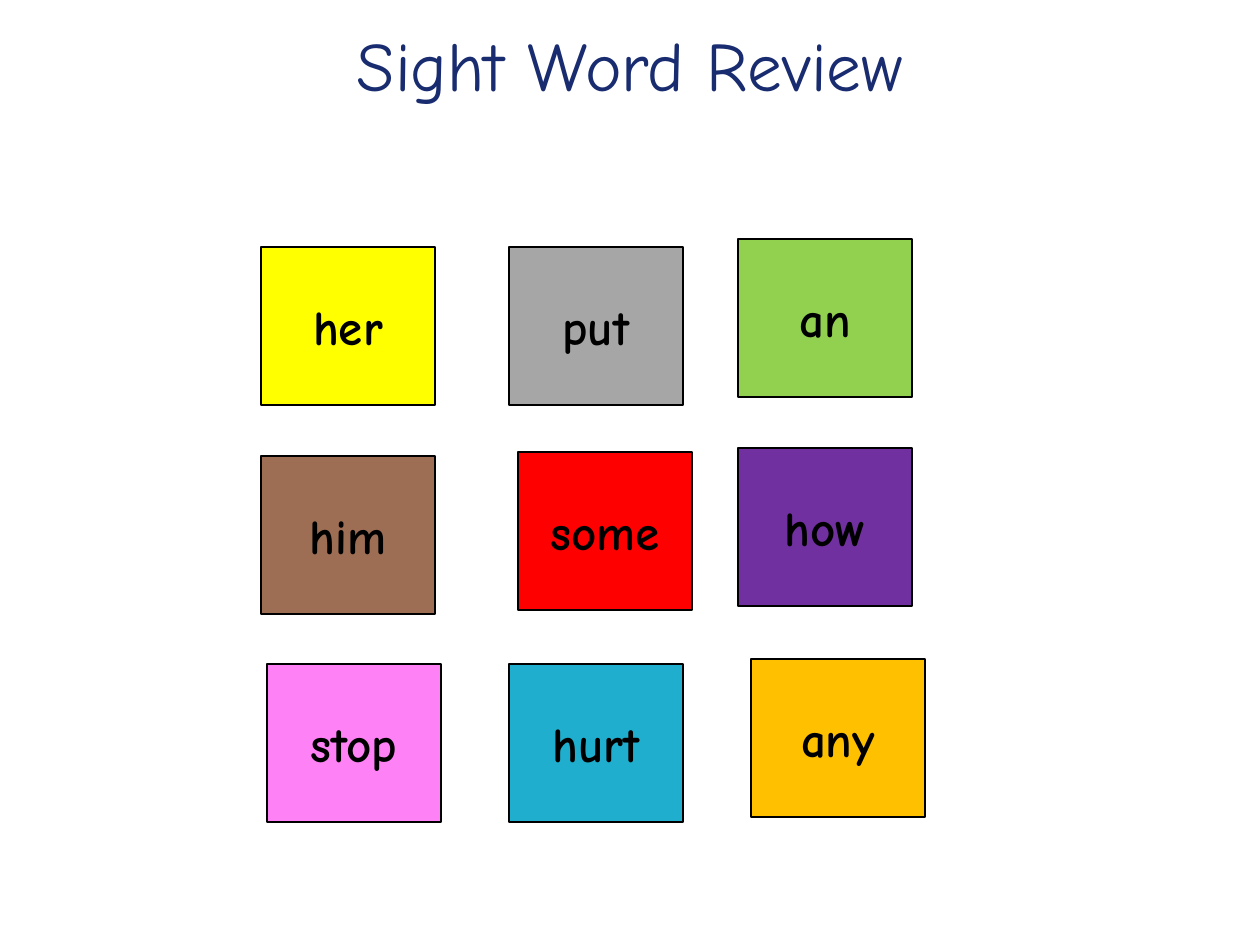
from pptx import Presentation
from pptx import util as u
from pptx.dml.color import RGBColor
from pptx.enum import shapes, text

PX = 914400 / 126
FONT = "Comic Neue"

NAVY = RGBColor(0x18, 0x2C, 0x6F)
BLACK = RGBColor(0x00, 0x00, 0x00)
YELLOW = RGBColor(0xFF, 0xFF, 0x00)
GRAY = RGBColor(0xA6, 0xA6, 0xA6)
GREEN = RGBColor(0x92, 0xD0, 0x50)
BROWN = RGBColor(0x9D, 0x6D, 0x54)
RED = RGBColor(0xFF, 0x00, 0x00)
PURPLE = RGBColor(0x70, 0x30, 0xA0)
PINK = RGBColor(0xFE, 0x82, 0xF5)
BLUE = RGBColor(0x1F, 0xAE, 0xCD)
GOLD = RGBColor(0xFF, 0xC0, 0x00)

CARD_W, CARD_H = 174, 158

# Word, fill, left, top: the cards are placed by hand, slightly off a grid
CARDS = [
    ("her", YELLOW, 261, 247),
    ("put", GRAY, 509, 247),
    ("an", GREEN, 738, 239),
    ("him", BROWN, 261, 456),
    ("some", RED, 518, 452),
    ("how", PURPLE, 738, 448),
    ("stop", PINK, 267, 664),
    ("hurt", BLUE, 509, 664),
    ("any", GOLD, 751, 659),
]


def px(n):
    return u.Emu(round(n * PX))


def write(shape, words, size, color, bold=False):
    frame = shape.text_frame
    frame.word_wrap = True
    frame.vertical_anchor = text.MSO_ANCHOR.MIDDLE
    para = frame.paragraphs[0]
    para.alignment = text.PP_ALIGN.CENTER
    run = para.add_run()
    run.text = words
    run.font.name = FONT
    run.font.size = u.Pt(size)
    run.font.bold = bold
    run.font.color.rgb = color


def add_title(slide, words):
    box = slide.shapes.add_textbox(px(63), px(38), px(1134), px(131))
    write(box, words, 39.6, NAVY)
    # A deep lower inset lifts the line to the top of the box
    box.text_frame.margin_bottom = px(86)


def add_card(slide, word, fill, left, top):
    card = slide.shapes.add_shape(
        shapes.MSO_SHAPE.RECTANGLE, px(left), px(top), px(CARD_W), px(CARD_H))
    card.shadow.inherit = False
    card.fill.solid()
    card.fill.fore_color.rgb = fill
    card.line.color.rgb = BLACK
    card.line.width = u.Pt(0.75)
    write(card, word, 28, BLACK, bold=True)


def main():
    deck = Presentation()
    deck.slide_width, deck.slide_height = px(1260), px(945)
    slide = deck.slides.add_slide(deck.slide_layouts[6])

    add_title(slide, "Sight Word Review")
    for card in CARDS:
        add_card(slide, *card)

    deck.save("out.pptx")


if __name__ == "__main__":
    main()
